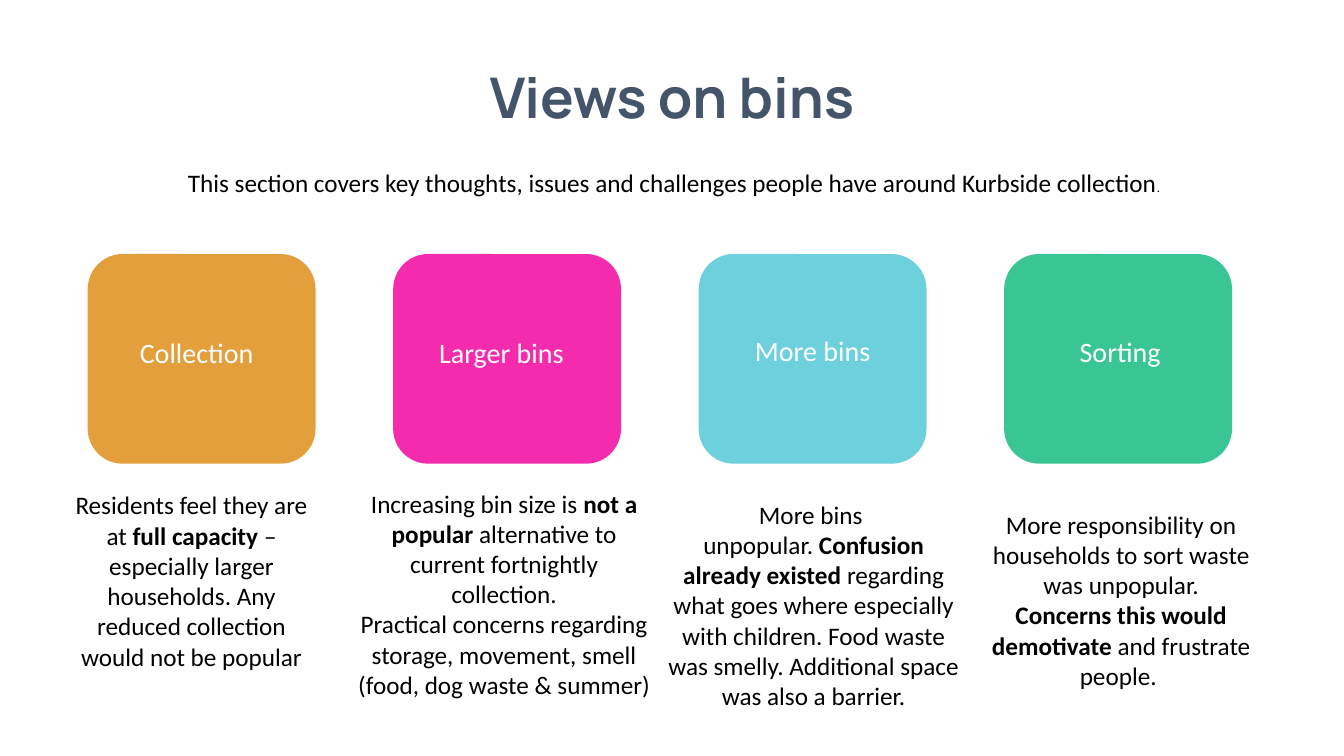
from pptx import Presentation
from pptx.dml.color import RGBColor
from pptx.enum.shapes import MSO_SHAPE
from pptx.enum.text import MSO_ANCHOR, MSO_AUTO_SIZE, PP_ALIGN
from pptx.util import Inches, Pt

COLORS = {
    "title": "44546A",
    "text": "000000",
    "label": "FFFFFF",
    "collection": "E39F3B",
    "larger": "F32BAC",
    "more": "6DD0DD",
    "sorting": "3AC694",
}


def place(sp, left, top, width, height):
    sp.left, sp.top = Inches(left), Inches(top)
    sp.width, sp.height = Inches(width), Inches(height)


def write(sp, paragraphs, color, font="Calibri", wrap=True):
    tf = sp.text_frame
    tf.word_wrap = wrap
    tf.auto_size = MSO_AUTO_SIZE.SHAPE_TO_FIT_TEXT
    tf.vertical_anchor = MSO_ANCHOR.TOP
    for i, runs in enumerate(paragraphs):
        p = tf.add_paragraph() if i else tf.paragraphs[0]
        p.alignment = PP_ALIGN.CENTER
        for text, size, bold in runs:
            r = p.add_run()
            r.text = text
            r.font.name = font
            r.font.size = Pt(size)
            r.font.bold = bold
            r.font.color.rgb = RGBColor.from_string(COLORS[color])


prs = Presentation()
prs.slide_width, prs.slide_height = Inches(13.33), Inches(7.5)
s = prs.slides.add_slide(prs.slide_layouts[5])

title = s.shapes.title
place(title, 4.6, 0.57, 4.13, 0.77)
write(title, [[("Views on bins", 40, True)]], "title", "Manrope", False)

intro = s.shapes.add_textbox(Inches(1.45), Inches(1.61), Inches(10.47), Inches(0.4))
write(intro, [[
    ("This section covers key thoughts, issues and challenges people have around Kurbside collection", 18, False),
    (".", 9, False),
]], "text")

themes = [
    ("collection", [("Collection", 20, False)], (0.93, 3.28, 2.04, 0.44),
     (0.62, 4.81, 2.56, 1.92), [
        [("Residents feel they are at ", 18, False),
         ("full capacity ", 18, True),
         ("– especially larger households. Any reduced collection would not be popular", 18, False)],
    ]),
    ("larger", [("Larger bins", 20, False), (" ", 30, False)], (4, 3.14, 2.04, 0.61),
     (3.43, 4.79, 3.14, 2.52), [
        [("Increasing bin size is ", 18, False),
         ("not a popular", 18, True),
         (" alternative to current fortnightly collection.", 18, False)],
        [("Practical concerns regarding storage, movement, smell (food, dog waste & summer)", 18, False)],
    ]),
    ("more", [("More bins", 20, False)], (7.04, 3.26, 2.04, 0.44),
     (6.5, 4.9, 3.14, 2.22), [
        [("More bins ", 18, False)],
        [("unpopular. ", 18, False),
         ("Confusion already existed ", 18, True),
         ("regarding what goes where especially with children. Food waste was smelly. "
          "Additional space was also a barrier.", 18, False)],
    ]),
    ("sorting", [("Sorting", 20, False)], (10.09, 3.27, 2.04, 0.44),
     (9.72, 5, 2.8, 1.92), [
        [("More responsibility on households to sort waste was unpopular.", 18, False)],
        [("Concerns this would demotivate ", 18, True),
         ("and frustrate people. ", 18, False)],
    ]),
]

for i, (color, label, label_box, view_box, view) in enumerate(themes):
    card = s.shapes.add_shape(MSO_SHAPE.ROUNDED_RECTANGLE, Inches(0.87 + 3.03 * i),
                              Inches(2.52), Inches(2.26), Inches(2.08))
    card.shadow.inherit = False
    card.fill.solid()
    card.fill.fore_color.rgb = RGBColor.from_string(COLORS[color])
    card.line.fill.background()

    tb = s.shapes.add_textbox(*map(Inches, label_box))
    write(tb, [label], "label")

    tb = s.shapes.add_textbox(*map(Inches, view_box))
    write(tb, view, "text")

prs.save("out.pptx")
